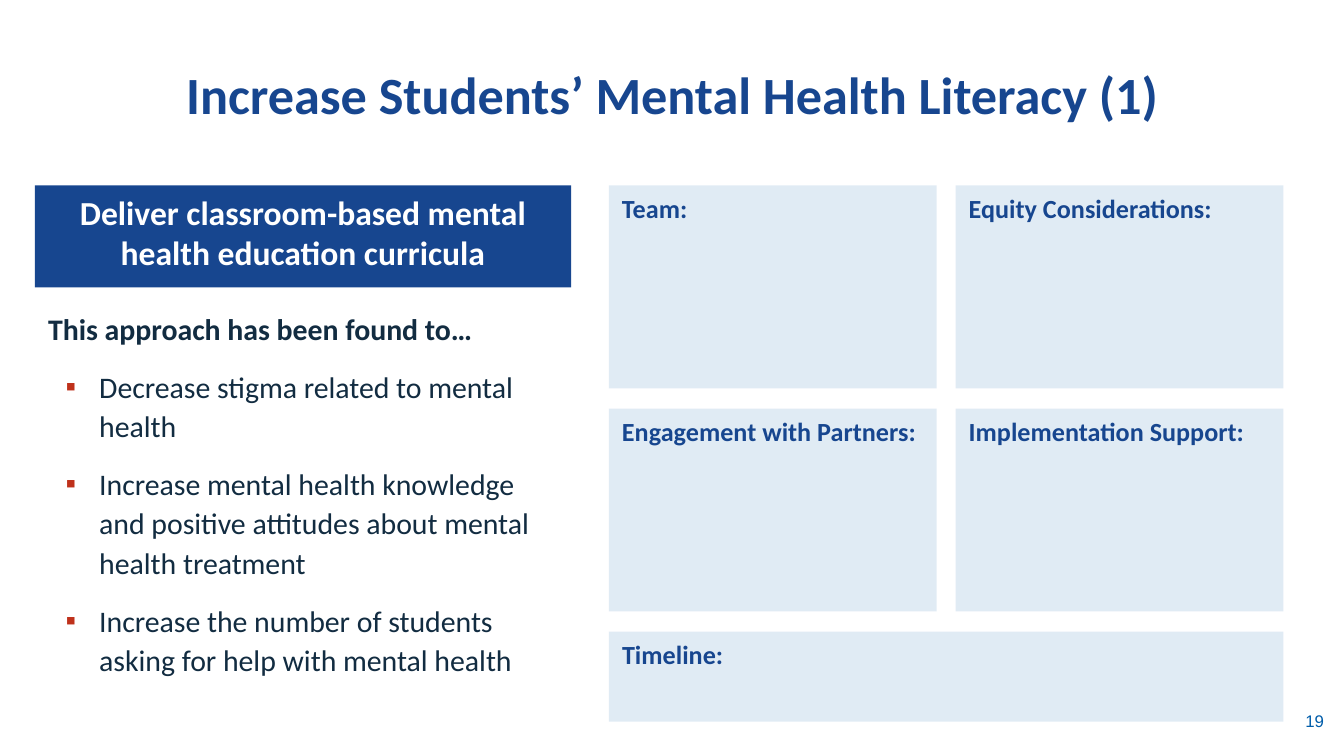
"""Build the mental health literacy planning slide."""
from dataclasses import dataclass

import lxml.etree
import pptx
import pptx.dml.color
import pptx.enum.shapes
import pptx.enum.text
import pptx.oxml.ns
import pptx.util

NAVY = pptx.dml.color.RGBColor(0x17, 0x46, 0x8F)
INK = pptx.dml.color.RGBColor(0x12, 0x2C, 0x41)
SKY = pptx.dml.color.RGBColor(0x86, 0xB2, 0xD7)
BLUE = pptx.dml.color.RGBColor(0x01, 0x5D, 0xAA)
WHITE = pptx.dml.color.RGBColor(0xFF, 0xFF, 0xFF)
RUST = pptx.dml.color.RGBColor(0xBF, 0x31, 0x1B)

ALIGN = pptx.enum.text.PP_ALIGN
ANCHOR = pptx.enum.text.MSO_ANCHOR
WIDTH = 10
HEIGHT = WIDTH * 9 / 16
LEFT, TOP = 4.53, 1.38
COLUMN, COLUMN_GAP = 2.44, 0.14
ROW, ROW_GAP = 1.51, 0.15
SIDE_LEFT, SIDE_WIDTH = 0.26, 3.99


@dataclass(frozen=True)
class Area:
    """A rectangle in inches."""
    left: float
    top: float
    width: float
    height: float

    def lengths(self) -> list:
        """Return the four lengths for a shape call."""
        return [pptx.util.Inches(value) for value in (self.left, self.top, self.width, self.height)]


@dataclass(frozen=True)
class Style:
    """The look of a span of text."""
    size: float
    color: pptx.dml.color.RGBColor
    bold: bool = False
    font: str = "Calibri"


@dataclass(frozen=True)
class Panel:
    """A labelled cell of the planning grid."""
    label: str
    column: int
    row: int
    columns: int = 1
    height: float = ROW

    def area(self) -> Area:
        """Place the panel on the grid."""
        return Area(LEFT + self.column * (COLUMN + COLUMN_GAP),
                    TOP + self.row * (ROW + ROW_GAP),
                    self.columns * COLUMN + (self.columns - 1) * COLUMN_GAP,
                    self.height)


PANELS = (
    Panel("Team:", 0, 0),
    Panel("Equity Considerations:", 1, 0),
    Panel("Engagement with Partners:", 0, 1),
    Panel("Implementation Support:", 1, 1),
    Panel("Timeline:", 0, 2, columns=2, height=0.67),
)
FINDINGS = (
    "Decrease stigma related to mental health",
    "Increase mental health knowledge and positive attitudes about mental health treatment",
    "Increase the number of students asking for help with mental health",
)


def add_span(para, text: str, style: Style, align=ALIGN.LEFT) -> None:
    """Add one styled run to a paragraph."""
    para.alignment = align
    span = para.add_run()
    span.text = text
    span.font.name = style.font
    span.font.size = pptx.util.Pt(style.size)
    span.font.bold = style.bold
    span.font.color.rgb = style.color


def add_text(page, area: Area, text: str, style: Style, align=ALIGN.LEFT, anchor=ANCHOR.TOP):
    """Add a wrapping text box and return it."""
    box = page.shapes.add_textbox(*area.lengths())
    box.text_frame.word_wrap = True
    box.text_frame.vertical_anchor = anchor
    add_span(box.text_frame.paragraphs[0], text, style, align)
    return box


def add_block(page, area: Area, fill, text: str, style: Style, align=ALIGN.LEFT):
    """Add a filled rectangle with text at its top and return it."""
    box = page.shapes.add_shape(pptx.enum.shapes.MSO_SHAPE.RECTANGLE, *area.lengths())
    box.shadow.inherit = False
    box.fill.solid()
    box.fill.fore_color.rgb = fill
    box.line.fill.background()
    box.text_frame.word_wrap = True
    box.text_frame.vertical_anchor = ANCHOR.TOP
    add_span(box.text_frame.paragraphs[0], text, style, align)
    return box


def set_opacity(box, percent: int) -> None:
    """Make the solid fill of a shape translucent."""
    color = box.fill._xPr.find(".//" + pptx.oxml.ns.qn("a:srgbClr"))
    lxml.etree.SubElement(color, pptx.oxml.ns.qn("a:alpha"), val=str(percent * 1000))


def add_bullet(frame, text: str, style: Style) -> None:
    """Append a paragraph with a square bullet."""
    para = frame.add_paragraph()
    properties = para._p.get_or_add_pPr()
    properties.set("marL", str(pptx.util.Inches(0.38)))
    properties.set("indent", str(pptx.util.Inches(-0.25)))
    bullet_color = lxml.etree.SubElement(properties, pptx.oxml.ns.qn("a:buClr"))
    lxml.etree.SubElement(bullet_color, pptx.oxml.ns.qn("a:srgbClr"), val=str(RUST))
    lxml.etree.SubElement(properties, pptx.oxml.ns.qn("a:buFont"), typeface="Arial")
    lxml.etree.SubElement(properties, pptx.oxml.ns.qn("a:buChar"), char="▪")
    para.line_spacing = 1.1
    para.space_before = pptx.util.Pt(10)
    add_span(para, text, style)


def main() -> None:
    """Draw the slide and save the deck."""
    deck = pptx.Presentation()
    deck.slide_width = pptx.util.Inches(WIDTH)
    deck.slide_height = pptx.util.Inches(HEIGHT)
    page = deck.slides.add_slide(deck.slide_layouts[6])

    title = add_text(page, Area(0.5, 0.04, 9, 0.94), "Increase Students’ Mental Health Literacy (1)",
                     Style(28, NAVY, True), ALIGN.CENTER, ANCHOR.BOTTOM)
    title.text_frame.paragraphs[0].line_spacing = pptx.util.Pt(30)

    add_block(page, Area(SIDE_LEFT, TOP, SIDE_WIDTH, 0.76), NAVY,
              "Deliver classroom-based mental health education curricula",
              Style(18, WHITE, True), ALIGN.CENTER)
    approach = add_text(page, Area(SIDE_LEFT, 2.26, SIDE_WIDTH, 2.77),
                        "This approach has been found to…", Style(16, INK, True))
    for finding in FINDINGS:
        add_bullet(approach.text_frame, finding, Style(16, INK))

    for panel in PANELS:
        box = add_block(page, panel.area(), SKY, panel.label, Style(14, NAVY, True))
        set_opacity(box, 25)

    add_text(page, Area(9.09, 5.24, 0.86, 0.3), "19", Style(9, BLUE, font="Arial"), ALIGN.RIGHT)
    deck.save("out.pptx")


if __name__ == "__main__":
    main()
